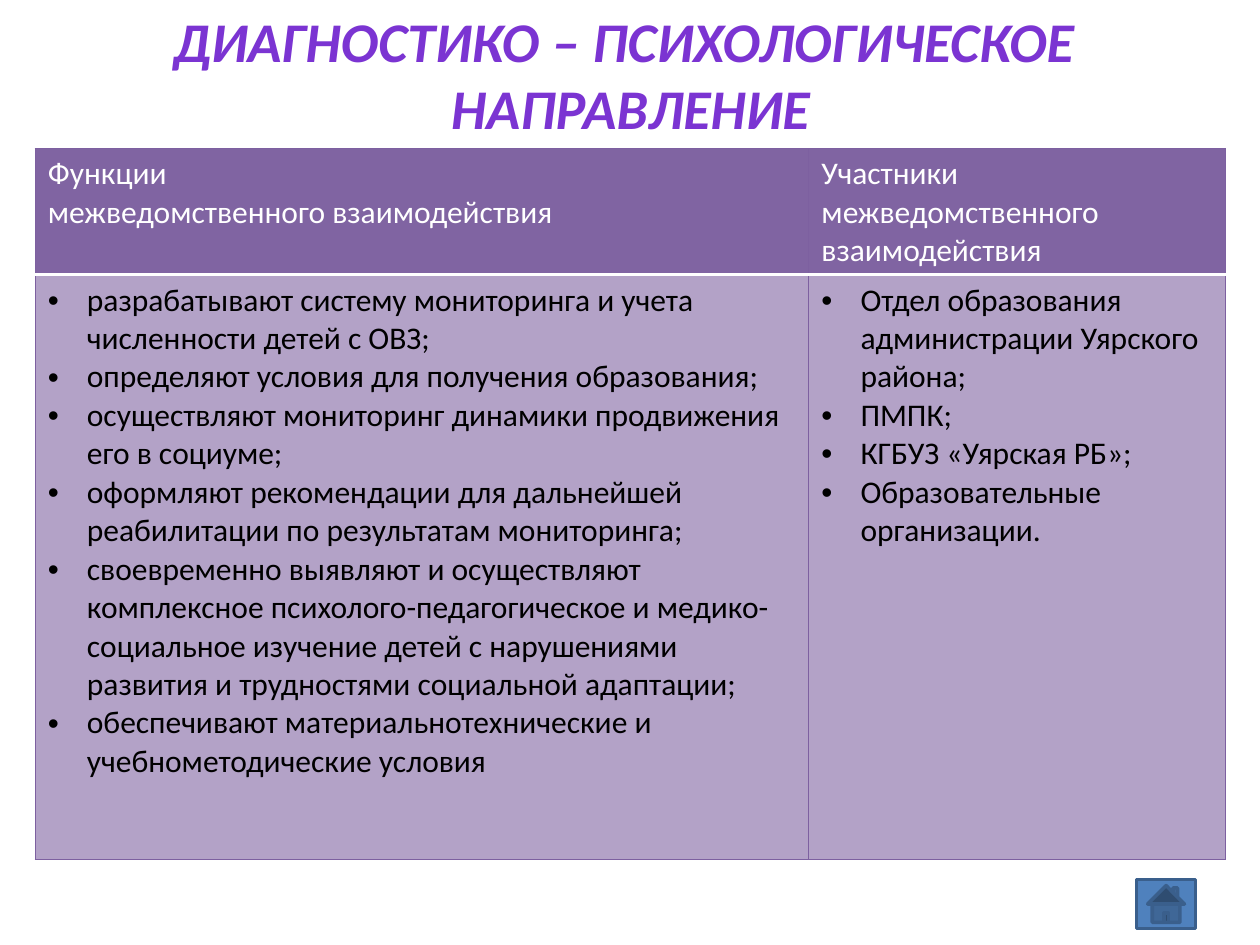
from dataclasses import dataclass

from lxml.etree import SubElement
from pptx import Presentation
from pptx.dml.color import RGBColor as RGB
from pptx.enum.shapes import MSO_SHAPE as Shape
from pptx.enum.text import MSO_AUTO_SIZE as AutoSize, PP_ALIGN as Align
from pptx.oxml.ns import qn
from pptx.util import Inches, Pt


@dataclass(frozen=True)
class Theme:
    font: str = "Calibri"
    title: str = "7B34D2"
    header: str = "8064A2"
    body: str = "B3A2C7"
    grid: str = "7D60A0"
    white: str = "FFFFFF"
    black: str = "000000"
    button: str = "4F81BD"
    button_edge: str = "3A5F8C"
    title_size: int = 32
    text_size: int = 18


theme = Theme()
title_format = {"name": theme.font, "size": Pt(theme.title_size), "bold": True, "italic": True}
cell_format = {"name": theme.font, "size": Pt(theme.text_size), "bold": False}

TITLE = ["ДИАГНОСТИКО – ПСИХОЛОГИЧЕСКОЕ ", "НАПРАВЛЕНИЕ"]
HEADERS = [
    ["Функции", "межведомственного взаимодействия"],
    ["Участники", "межведомственного взаимодействия"],
]
FUNCTIONS = [
    "разрабатывают систему мониторинга и учета численности детей с ОВЗ;",
    "определяют условия для получения образования;",
    "осуществляют мониторинг динамики продвижения его в социуме;",
    "оформляют рекомендации для дальнейшей реабилитации по результатам мониторинга;",
    "своевременно выявляют и осуществляют комплексное психолого-педагогическое и "
    "медико-социальное изучение детей с нарушениями развития и трудностями социальной адаптации;",
    "обеспечивают материальнотехнические и учебнометодические условия",
]
PARTICIPANTS = [
    "Отдел образования администрации Уярского района;",
    "ПМПК;",
    "КГБУЗ «Уярская РБ»;",
    "Образовательные организации.",
]


def write_lines(frame, lines, font_format, color):
    """Fill a text frame with one formatted paragraph per line."""
    for index, line in enumerate(lines):
        paragraph = frame.paragraphs[0] if index == 0 else frame.add_paragraph()
        run = paragraph.add_run()
        run.text = line
        for key, value in font_format.items():
            setattr(run.font, key, value)
        run.font.color.rgb = RGB.from_string(color)


def add_border(cell, side, color, width):
    edge = SubElement(cell._tc.get_or_add_tcPr(), qn(f"a:ln{side}"), w=str(Pt(width)))
    SubElement(SubElement(edge, qn("a:solidFill")), qn("a:srgbClr"), val=color)


deck = Presentation()
deck.slide_width, deck.slide_height = Inches(10), Inches(7.5)
slide = deck.slides.add_slide(deck.slide_layouts[6])

# Title
title = slide.shapes.add_textbox(Inches(1.24), 0, Inches(7.53), Inches(1.18)).text_frame
title.word_wrap = False
title.auto_size = AutoSize.SHAPE_TO_FIT_TEXT
write_lines(title, TITLE, title_format, theme.title)
for paragraph in title.paragraphs:
    paragraph.alignment = Align.CENTER

# Table of functions and participants
table = slide.shapes.add_table(
    2, 2, Inches(0.28), Inches(1.18), Inches(9.45), Inches(5.64)
).table
for column, width in zip(table.columns, (6.14, 3.31)):
    column.width = Inches(width)
for row, height in zip(table.rows, (1, 4.64)):
    row.height = Inches(height)

grid_line, divider = (theme.grid, 0.75), (theme.white, 2)
row_styles = [
    (HEADERS, theme.header, theme.white, grid_line, divider),
    ([FUNCTIONS, PARTICIPANTS], theme.body, theme.black, divider, grid_line),
]
for row, (contents, fill, color, top, bottom) in zip(table.rows, row_styles):
    for cell, lines in zip(row.cells, contents):
        write_lines(cell.text_frame, lines, cell_format, color)
        for side, border in zip("LRTB", (grid_line, grid_line, top, bottom)):
            add_border(cell, side, *border)
        cell.fill.solid()
        cell.fill.fore_color.rgb = RGB.from_string(fill)

# Bullets in the body row
indent = Inches(0.31)
for cell in table.rows[1].cells:
    for paragraph in cell.text_frame.paragraphs:
        properties = paragraph._p.get_or_add_pPr()
        properties.set("marL", str(indent))
        properties.set("indent", str(-indent))
        SubElement(properties, qn("a:buFont"), typeface="Arial")
        SubElement(properties, qn("a:buChar"), char="•")

# Home button
home = slide.shapes.add_shape(
    Shape.ACTION_BUTTON_HOME, Inches(9.02), Inches(6.98), Inches(0.47), Inches(0.39)
)
home.shadow.inherit = False
home.fill.solid()
home.fill.fore_color.rgb = RGB.from_string(theme.button)
home.line.color.rgb = RGB.from_string(theme.button_edge)
home.line.width = Pt(2)

deck.save("out.pptx")
